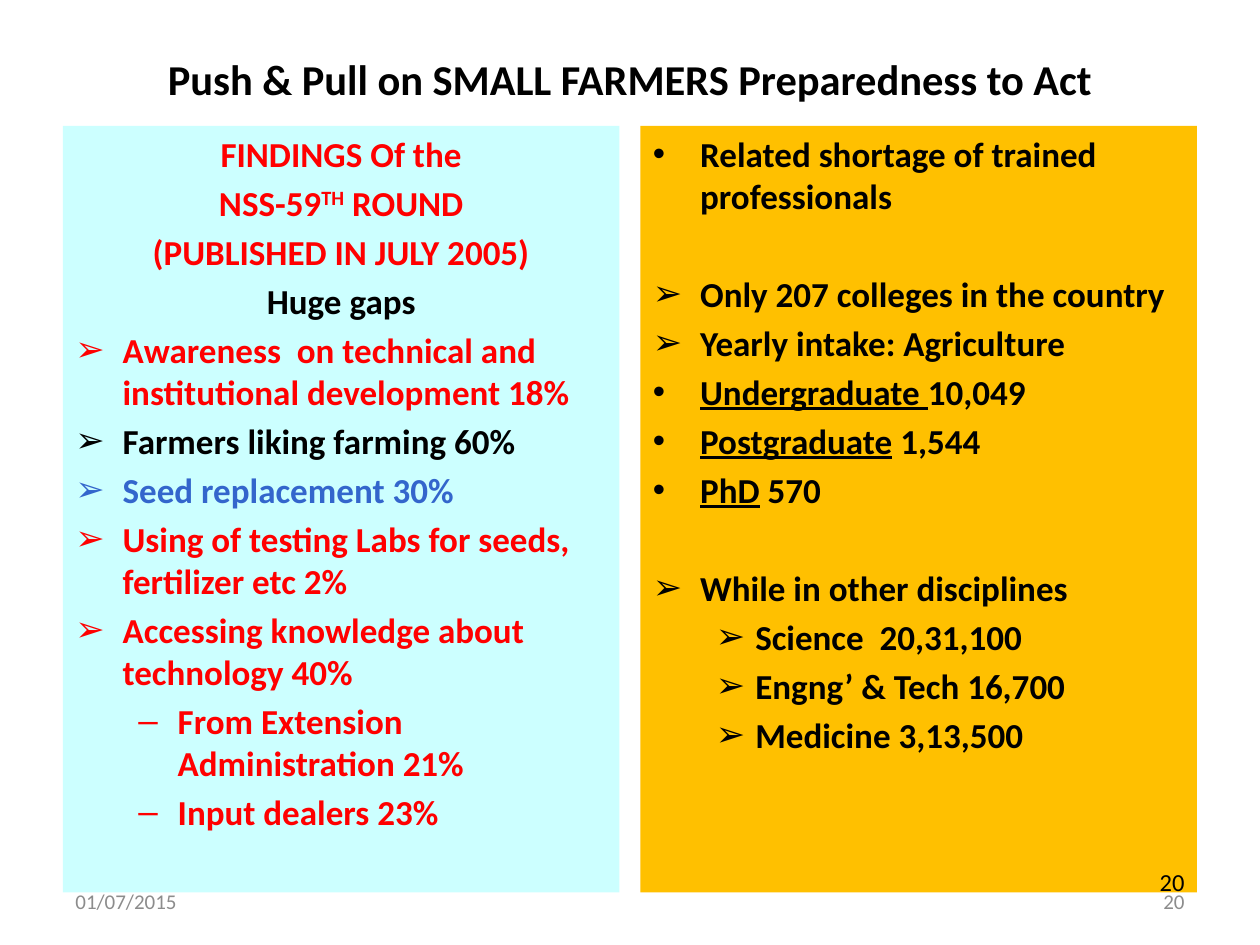
from dataclasses import dataclass

from lxml import etree
from pptx import Presentation
from pptx.dml.color import RGBColor
from pptx.enum.shapes import MSO_SHAPE
from pptx.enum.text import MSO_ANCHOR, PP_ALIGN
from pptx.oxml.ns import qn
from pptx.util import Pt

LEFT, CENTER, RIGHT = PP_ALIGN.LEFT, PP_ALIGN.CENTER, PP_ALIGN.RIGHT
TOP, MIDDLE = MSO_ANCHOR.TOP, MSO_ANCHOR.MIDDLE
RECTANGLE = MSO_SHAPE.RECTANGLE

FONT = "Calibri"
RED, BLACK, BLUE, GREY = "FF0000", "000000", "3366CC", "8C8C8C"
ARROW, DOT, DASH = "➢", "•", "–"
INDENTS = [(27, 27), (58.5, 22.5)]  # left margin and hang, by level
MARGIN, PANEL_TOP, PANEL_WIDTH, PANEL_HEIGHT = 36, 72, 318, 438
LINE_GAP, SECTION_GAP = 4, 32


@dataclass(frozen=True)
class Piece:
    text: str
    underline: bool = False
    superscript: bool = False


@dataclass(frozen=True)
class Line:
    pieces: tuple[Piece, ...]
    bullet: str = ""
    color: str = BLACK
    level: int = 0
    gap: float = LINE_GAP


@dataclass(frozen=True)
class Label:
    text: str
    left: float
    top: float
    width: float
    height: float
    size: float
    color: str = BLACK
    align: PP_ALIGN = LEFT
    anchor: MSO_ANCHOR = MIDDLE
    bold: bool = False


def rgb(value: str) -> RGBColor:
    return RGBColor.from_string(value)


def line(text: str, bullet: str = "", color: str = BLACK, level: int = 0,
         gap: float = LINE_GAP) -> Line:
    return Line((Piece(text),), bullet, color, level, gap)


def intake(degree: str, count: str) -> Line:
    return Line((Piece(degree, underline=True), Piece(count)), DOT)


def style(paragraph, size: float, color: str, bold: bool, align: PP_ALIGN) -> None:
    paragraph.alignment = align
    font = paragraph.font
    font.name, font.size, font.bold = FONT, Pt(size), bold
    font.color.rgb = rgb(color)


def set_indent(paragraph, item: Line) -> None:
    margin, hang = INDENTS[item.level]
    properties = paragraph._p.get_or_add_pPr()
    properties.set("marL", str(Pt(margin)))
    properties.set("indent", str(-Pt(hang)))
    if item.bullet:
        etree.SubElement(properties, qn("a:buFont")).set("typeface", "Arial")
        etree.SubElement(properties, qn("a:buChar")).set("char", item.bullet)


def add_panel(slide, left: float, fill: str, lines: list[Line]) -> None:
    panel = slide.shapes.add_shape(RECTANGLE, Pt(left), Pt(PANEL_TOP),
                                   Pt(PANEL_WIDTH), Pt(PANEL_HEIGHT))
    panel.shadow.inherit = False
    panel.fill.solid()
    panel.fill.fore_color.rgb = rgb(fill)
    panel.line.fill.background()
    frame = panel.text_frame
    frame.word_wrap, frame.vertical_anchor = True, TOP
    for index, item in enumerate(lines):
        paragraph = frame.add_paragraph() if index else frame.paragraphs[0]
        set_indent(paragraph, item)
        paragraph.level = item.level
        paragraph.space_before = Pt(item.gap)
        style(paragraph, 20, item.color, True, LEFT if item.bullet else CENTER)
        for piece in item.pieces:
            run = paragraph.add_run()
            run.text = piece.text
            if piece.underline:
                run.font.underline = True
            if piece.superscript:
                run._r.get_or_add_rPr().set("baseline", "30000")


def add_label(slide, label: Label) -> None:
    box = slide.shapes.add_textbox(Pt(label.left), Pt(label.top),
                                   Pt(label.width), Pt(label.height))
    frame = box.text_frame
    frame.word_wrap, frame.vertical_anchor = True, label.anchor
    paragraph = frame.paragraphs[0]
    paragraph.add_run().text = label.text
    style(paragraph, label.size, label.color, label.bold, label.align)


FINDINGS = [
    line("FINDINGS Of the", color=RED),
    Line((Piece("NSS-59"), Piece("TH", superscript=True), Piece(" ROUND")), color=RED),
    line("(PUBLISHED IN JULY 2005)", color=RED),
    line("Huge gaps"),
    line("Awareness  on technical and institutional development 18%", ARROW, RED),
    line("Farmers liking farming 60%", ARROW),
    line("Seed replacement 30%", ARROW, BLUE),
    line("Using of testing Labs for seeds, fertilizer etc 2%", ARROW, RED),
    line("Accessing knowledge about technology 40%", ARROW, RED),
    line("From Extension Administration 21%", DASH, RED, 1),
    line("Input dealers 23%", DASH, RED, 1),
]

SHORTAGE = [
    line("Related shortage of trained professionals", DOT),
    line("Only 207 colleges in the country", ARROW, gap=SECTION_GAP),
    line("Yearly intake: Agriculture", ARROW),
    intake("Undergraduate ", "10,049"),
    intake("Postgraduate", " 1,544"),
    intake("PhD", " 570"),
    line("While in other disciplines", ARROW, gap=SECTION_GAP),
    line("Science  20,31,100", ARROW, level=1),
    line("Engng’ & Tech 16,700", ARROW, level=1),
    line("Medicine 3,13,500", ARROW, level=1),
]

TITLE = Label("Push & Pull on SMALL FARMERS Preparedness to Act",
              MARGIN, 18, 648, 54, 24.3, align=CENTER, bold=True)
FOOTERS = [
    Label("01/07/2015", MARGIN, 500.5, 168, 28.75, 12, GREY),
    Label("20", 516, 500.5, 168, 28.75, 12, GREY, RIGHT),
    Label("20", 516, 492, 168, 37.5, 14, BLACK, RIGHT, TOP),
]


def main() -> None:
    deck = Presentation()
    deck.slide_width, deck.slide_height = Pt(720), Pt(540)
    slide = deck.slides.add_slide(deck.slide_layouts[6])

    # Title
    add_label(slide, TITLE)

    # Survey findings beside the shortage of professionals
    add_panel(slide, MARGIN, "CCFFFF", FINDINGS)
    add_panel(slide, 720 - MARGIN - PANEL_WIDTH, "FFC000", SHORTAGE)

    # Date and page numbers
    for footer in FOOTERS:
        add_label(slide, footer)

    deck.save("out.pptx")


if __name__ == "__main__":
    main()
